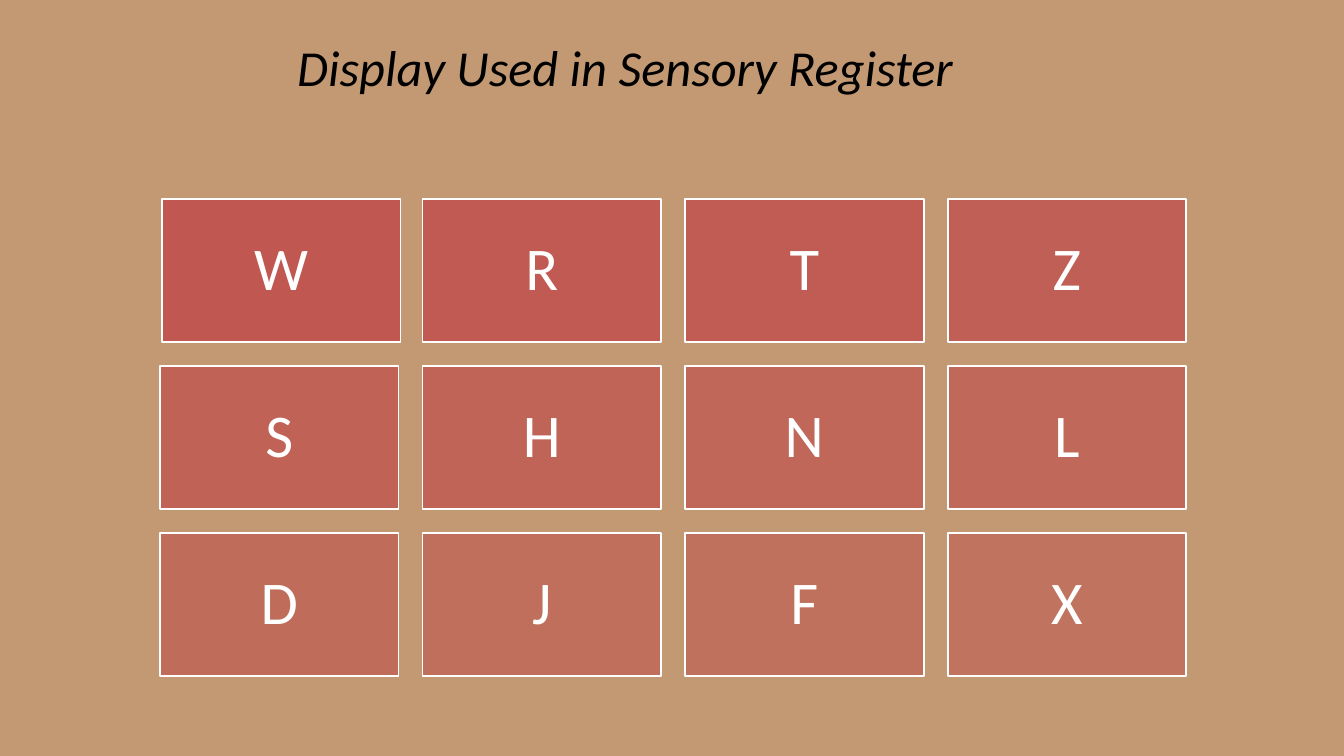
from lxml.etree import SubElement
from pptx import Presentation
from pptx.dml.color import RGBColor
from pptx.enum.shapes import MSO_SHAPE as Shape
from pptx.enum.text import MSO_ANCHOR as Anchor, MSO_AUTO_SIZE as AutoSize, PP_ALIGN as Align
from pptx.oxml.ns import qn
from pptx.util import Inches, Pt

COLORS = {"background": "C29973", "tile": "C0504D", "light": "FFFFFF", "dark": "000000"}
LETTER_ROWS = ["WRTZ", "SHNL", "DJFX"]
TILE_WIDTH, TILE_HEIGHT = 3.55, 2.13
GRID_LEFT, GRID_TOP = 2.38, 2.96
COLUMN_STEP, ROW_STEP = 3.907, 2.485
FIRST_TILE_SHIFT = 0.03
FIRST_OPACITY, LAST_OPACITY = 90, 50


def color(name):
    return RGBColor.from_string(COLORS[name])


def set_opacity(fill, percent):
    """Make a solid fill partly transparent."""
    rgb = fill._xPr.find(qn("a:solidFill")).find(qn("a:srgbClr"))
    SubElement(rgb, qn("a:alpha"), val=str(round(percent * 1000)))


def write_text(box, text, align, anchor, margin, font_format):
    frame = box.text_frame
    frame.word_wrap = True
    frame.vertical_anchor = anchor
    for side in ("left", "top", "right", "bottom"):
        setattr(frame, f"margin_{side}", Inches(margin))
    para = frame.paragraphs[0]
    para.alignment = align
    span = para.add_run()
    span.text = text
    for name, value in font_format.items():
        setattr(span.font, name, value)
    return para


def add_title(page, text):
    title = page.shapes.title
    place = {"left": 4.42, "top": 0.54, "width": 13.55, "height": 0.91}
    for name, value in place.items():
        setattr(title, name, Inches(value))
    font_format = {"name": "Calibri", "size": Pt(54), "italic": True}
    para = write_text(title, text, Align.LEFT, Anchor.TOP, 0, font_format)
    para.runs[0].font.color.rgb = color("dark")
    title.text_frame.auto_size = AutoSize.SHAPE_TO_FIT_TEXT


def add_tile(page, letter, left, top, opacity):
    tile = page.shapes.add_shape(Shape.RECTANGLE, Inches(left), Inches(top),
                                 Inches(TILE_WIDTH), Inches(TILE_HEIGHT))
    tile.shadow.inherit = False
    tile.fill.solid()
    tile.fill.fore_color.rgb = color("tile")
    set_opacity(tile.fill, opacity)
    tile.line.color.rgb = color("light")
    tile.line.width = Pt(2)
    font_format = {"name": "Calibri", "size": Pt(65)}
    para = write_text(tile, letter, Align.CENTER, Anchor.MIDDLE, 0.27, font_format)
    para.runs[0].font.color.rgb = color("light")
    para.line_spacing = 0.9


def add_letter_grid(page):
    """Lay out the letters in rows, fading evenly from first to last."""
    columns = len(LETTER_ROWS[0])
    fade = (FIRST_OPACITY - LAST_OPACITY) / (columns * len(LETTER_ROWS) - 1)
    for row, letters in enumerate(LETTER_ROWS):
        for column, letter in enumerate(letters):
            index = row * columns + column
            left = GRID_LEFT + column * COLUMN_STEP
            if index == 0:
                left += FIRST_TILE_SHIFT
            add_tile(page, letter, left, GRID_TOP + row * ROW_STEP,
                     FIRST_OPACITY - index * fade)


def main():
    deck = Presentation()
    deck.slide_width, deck.slide_height = Inches(20), Inches(11.25)
    page = deck.slides.add_slide(deck.slide_layouts[5])
    page.background.fill.solid()
    page.background.fill.fore_color.rgb = color("background")
    add_title(page, "Display Used in Sensory Register")
    add_letter_grid(page)
    deck.save("out.pptx")


if __name__ == "__main__":
    main()
